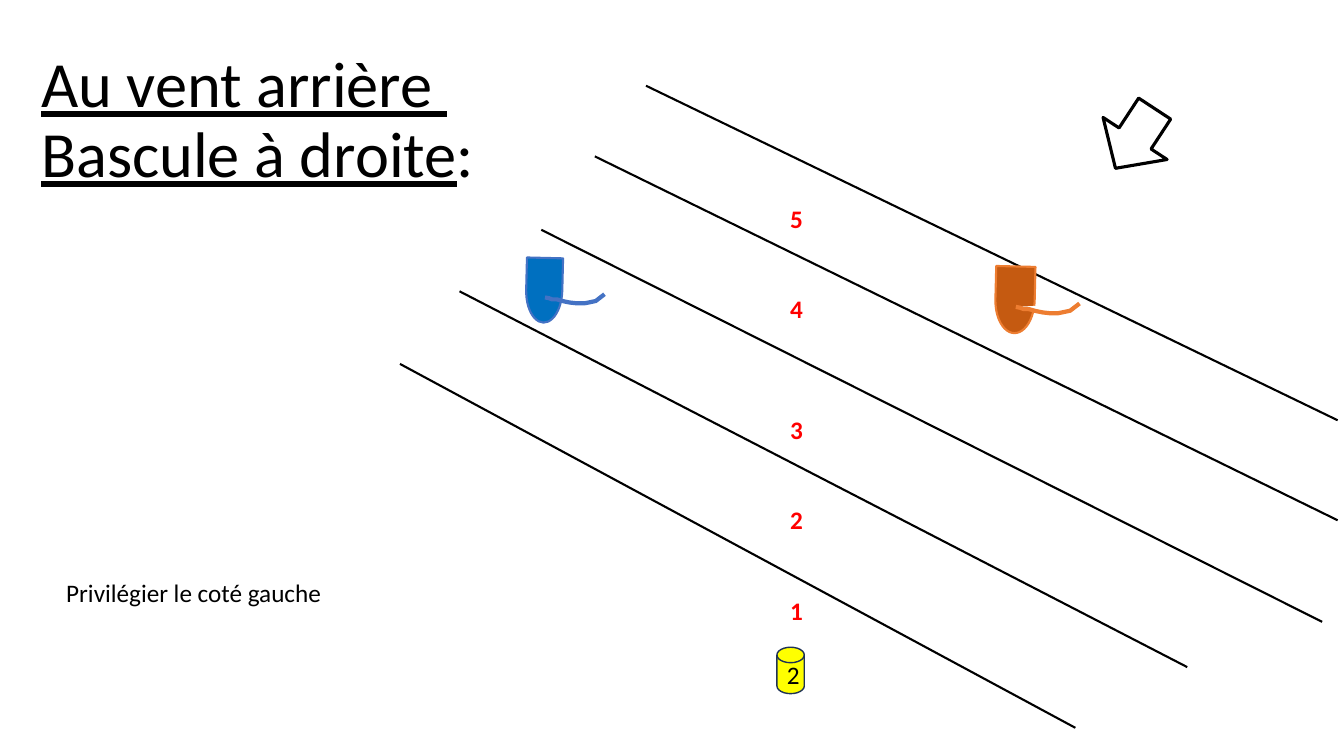
from dataclasses import dataclass

from lxml import etree
from pptx import Presentation
from pptx.dml.color import RGBColor
from pptx.enum.shapes import MSO_CONNECTOR, MSO_SHAPE
from pptx.enum.text import MSO_ANCHOR, PP_ALIGN
from pptx.oxml.ns import qn
from pptx.util import Cm, Pt

STRAIGHT = MSO_CONNECTOR.STRAIGHT
HULL = MSO_SHAPE.FLOWCHART_DELAY
BUOY = MSO_SHAPE.FLOWCHART_MAGNETIC_DISK
DOWN_ARROW = MSO_SHAPE.DOWN_ARROW
TOP, MIDDLE, BOTTOM = MSO_ANCHOR.TOP, MSO_ANCHOR.MIDDLE, MSO_ANCHOR.BOTTOM
CENTER = PP_ALIGN.CENTER


@dataclass(frozen=True)
class Theme:
    font: str = "Calibri"
    title_size: float = 46
    body_size: float = 18
    black: str = "000000"
    white: str = "FFFFFF"
    red: str = "FF0000"
    yellow: str = "FFFF00"
    navy: str = "1E3256"
    blue: str = "0070C0"
    blue_edge: str = "4472C4"
    orange: str = "C55A11"
    orange_edge: str = "ED7D31"


THEME = Theme()

# Start and end of each wind line, in cm
WIND_LINES = [
    (16.28, 2.16, 33.71, 10.59),
    (14.99, 3.94, 33.71, 13.11),
    (13.64, 5.79, 33.32, 15.67),
    (11.58, 7.34, 29.92, 16.81),
    (10.08, 9.17, 27.1, 18.34),
]
# Sail outline in cm, from the mast of a hull 1.63 cm long
SAIL = [(0, 0), (0.1, 0.02), (0.18, 0.05), (0.3, 0.05), (0.48, 0.1), (0.63, 0.13),
        (0.81, 0.15), (0.99, 0.15), (1.14, 0.12), (1.28, 0.09), (1.5, -0.08)]
# Each number with the space above it, in points
ZONES = [("5", 0), ("4", 43), ("3", 64.5), ("2", 43), ("1", 43)]


def color(value):
    return RGBColor.from_string(value)


def paint(shape, fill, line, width):
    shape.shadow.inherit = False
    if fill:
        shape.fill.solid()
        shape.fill.fore_color.rgb = color(fill)
    else:
        shape.fill.background()
    shape.line.color.rgb = color(line)
    shape.line.width = Pt(width)


def set_font(font, size, value, bold=False):
    font.name = THEME.font
    font.size = Pt(size)
    font.bold = bold
    font.color.rgb = color(value)


def add_text_frame(page, box, anchor=TOP):
    frame = page.shapes.add_textbox(*map(Cm, box)).text_frame
    frame.word_wrap = True
    frame.vertical_anchor = anchor
    return frame


def add_title(page, box):
    para = add_text_frame(page, box, BOTTOM).paragraphs[0]
    para.line_spacing = 0.9
    para.space_after = Pt(8)
    set_font(para.font, THEME.title_size, THEME.black)
    first = para.add_run()
    first.text = "Au vent arrière "
    para.add_line_break()
    second = para.add_run()
    second.text = "Bascule à droite"
    for span in (first, second):
        span.font.underline = True
    para.add_run().text = ":"


def add_wind_lines(page):
    for ends in WIND_LINES:
        line = page.shapes.add_connector(STRAIGHT, *map(Cm, ends))
        line.line.color.rgb = color(THEME.black)
        line.line.width = Pt(1.5)
        etree.SubElement(line._element.spPr, qn("a:effectLst"))


def add_boat(page, box, sail_scale, fill, edge, sail_fill=None):
    left, top, length, beam = box
    hull = page.shapes.add_shape(HULL, *map(Cm, box))
    hull.rotation = 91.4
    paint(hull, fill, edge, 1.5)
    # The mast stands just below the centre of the hull
    mast_x, mast_y = left + length / 2 + 0.02, top + beam / 2 + 0.18
    points = [(Cm(mast_x + x * sail_scale), Cm(mast_y + y * sail_scale)) for x, y in SAIL]
    builder = page.shapes.build_freeform(*points[0])
    builder.add_line_segments(points[1:], close=False)
    paint(builder.convert_to_shape(), sail_fill, edge, 3)


def add_buoy(page, box):
    buoy = page.shapes.add_shape(BUOY, *map(Cm, box))
    paint(buoy, THEME.yellow, THEME.navy, 1)
    buoy.text_frame.vertical_anchor = MIDDLE
    para = buoy.text_frame.paragraphs[0]
    para.text = "2"
    para.alignment = CENTER
    set_font(para.font, THEME.body_size, THEME.black)


def add_wind_arrow(page, box):
    arrow = page.shapes.add_shape(DOWN_ARROW, *map(Cm, box))
    arrow.rotation = 33.3
    paint(arrow, THEME.white, THEME.black, 2.25)


def add_zone_numbers(page, box):
    frame = add_text_frame(page, box)
    for index, (number, gap) in enumerate(ZONES):
        para = frame.add_paragraph() if index else frame.paragraphs[0]
        para.text = number
        para.space_before = Pt(gap)
        set_font(para.font, THEME.body_size, THEME.red, bold=True)


def add_advice(page, box):
    para = add_text_frame(page, box).paragraphs[0]
    para.text = "Privilégier le coté gauche"
    set_font(para.font, THEME.body_size, THEME.black)


def main():
    deck = Presentation()
    deck.slide_width, deck.slide_height = Cm(33.87), Cm(19.05)
    page = deck.slides.add_slide(deck.slide_layouts[6])

    add_title(page, (0.79, 0.71, 12.47, 4.24))
    add_wind_lines(page)
    add_boat(page, (12.9, 6.86, 1.63, 0.91), 1, THEME.blue, THEME.blue_edge)
    add_buoy(page, (19.58, 16.31, 0.69, 1.17))
    add_boat(page, (24.74, 7.06, 1.68, 0.99), 1.07,
             THEME.orange, THEME.orange_edge, THEME.white)
    add_wind_arrow(page, (27.64, 2.59, 1.93, 1.8))
    add_zone_numbers(page, (19.66, 5, 2.54, 11.02))
    add_advice(page, (1.42, 14.43, 10.52, 1.02))

    deck.save("out.pptx")


if __name__ == "__main__":
    main()
